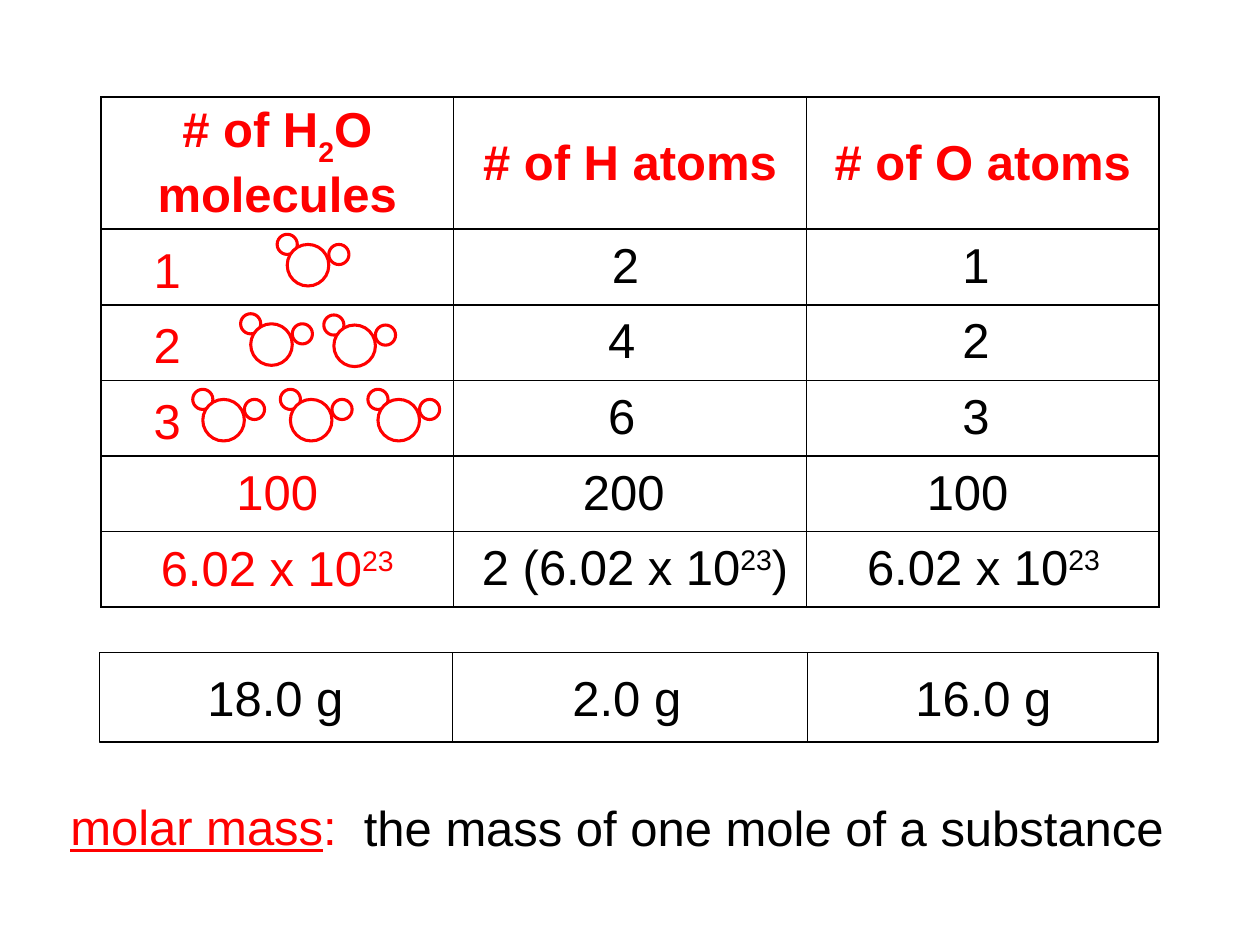
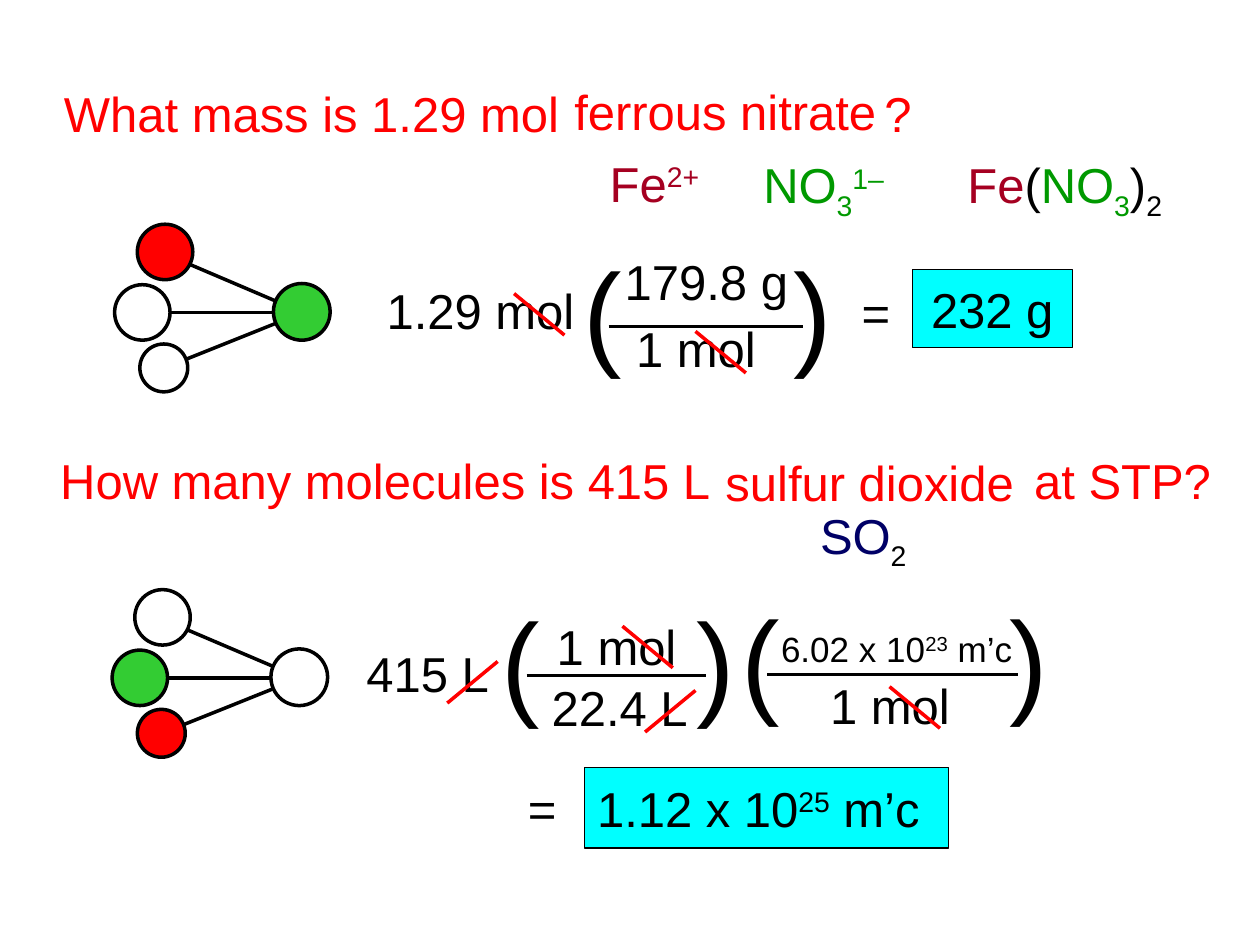
"""Build two chemistry slides: counting atoms in water, and mole conversions."""
import pptx
import pptx.dml.color
import pptx.enum.shapes
import pptx.enum.text
import pptx.oxml.ns
import pptx.util
from lxml import etree

Inches = pptx.util.Inches
RGBColor = pptx.dml.color.RGBColor
Anchor = pptx.enum.text.MSO_ANCHOR
Align = pptx.enum.text.PP_ALIGN
Shape = pptx.enum.shapes.MSO_SHAPE

RED = RGBColor(0xFF, 0x00, 0x00)
BLACK = RGBColor(0x00, 0x00, 0x00)
WHITE = RGBColor(0xFF, 0xFF, 0xFF)
CYAN = RGBColor(0x00, 0xFF, 0xFF)
GREEN = RGBColor(0x33, 0xCC, 0x33)
IRON = RGBColor(0xA5, 0x00, 0x21)
NITRATE = RGBColor(0x00, 0x99, 0x00)
NAVY = RGBColor(0x00, 0x00, 0x66)

FONT = "Arial"
BODY_SIZE = 28
LINE_HEIGHT = 0.57
SUPER, SUB = 30, -25

AVOGADRO = [("6.02 x 10",), ("23", SUPER)]

COLUMN_WIDTH = 2.8
ROW_HEIGHTS = [1.02] + [0.6] * 5
HEADERS = [[("# of H",), ("2", -30), ("O molecules",)], "# of H atoms", "# of O atoms"]
COUNTS = ["1", "2", "3", "100", AVOGADRO]
DRAWN_ROWS = 3
FIRST_ANSWER_TOP = 1.81
HYDROGEN_ANSWERS = [
    (4.59, 0.75, "2"), (4.56, 0.75, "4"), (4.56, 0.75, "6"), (4.37, 1.16, "200"),
    (3.64, 2.8, [("2 (6.02 x 10",), ("23", SUPER), (")",)]),
]
OXYGEN_ANSWERS = [
    (7.37, 0.75, "1"), (7.37, 0.75, "2"), (7.37, 0.75, "3"), (7.1, 1.16, "100"),
    (6.61, 2.39, AVOGADRO),
]
MASSES = [(1.39, "18.0 g"), (4.18, "2.0 g"), (7.01, "16.0 g")]
MASS_FRAME = (0.79, 5.18, 8.4, 0.71)
MASS_DIVIDERS = [3.59, 6.41]
WATER_ATOMS = [(0, 0, 0.16), (0.41, 0.08, 0.16), (0.08, 0.08, 0.33)]
WATER_PLACES = [(2.2, 1.86), (1.91, 2.49), (2.57, 2.5)] + [
    (1.53 + 0.695 * step, 3.09) for step in range(3)]

QUESTIONS = [
    (0.41, 0.61, 4.2, "What mass is 1.29 mol"),
    (4.46, 0.6, 2.61, "ferrous nitrate"),
    (6.92, 0.61, 0.5, "?"),
    (0.38, 3.53, 5.4, "How many molecules is 415 L"),
    (5.66, 3.54, 2.5, "sulfur dioxide"),
    (8.11, 3.53, 1.7, "at STP?"),
]
FORMULAS = [
    (4.74, 1.17, 1.31, [("Fe", 0, IRON), ("2+", SUPER, IRON)]),
    (5.96, 1.18, 1.34, [("NO", 0, NITRATE), ("3", SUB, NITRATE), ("1–", SUPER, NITRATE)]),
    (7.58, 1.18, 1.9, [("Fe", 0, IRON), ("(",), ("NO", 0, NITRATE),
                       ("3", SUB, NITRATE), (")",), ("2", SUB)]),
    (6.41, 3.96, 0.92, [("SO", 0, NAVY), ("2", SUB)]),
]
WORKING = [
    (2.97, 2.18, 1.73, "1.29 mol"),
    (4.86, 1.95, 1.62, "179.8 g"),
    (4.95, 2.48, 1.19, "1 mol"),
    (6.74, 2.19, 0.45, "="),
    (2.81, 5.06, 1.19, "415 L"),
    (4.32, 4.84, 1.19, "1 mol"),
    (4.28, 5.33, 1.4, "22.4 L"),
    (6.49, 5.31, 1.19, "1 mol"),
    (4.09, 6.13, 0.45, "="),
]
RESULTS = [
    (7.24, 2.14, 1.27, 0.62, "232 g", Align.CENTER),
    (4.64, 6.09, 2.89, 0.64, [("1.12 x 10",), ("25", SUPER), (" m’c",)], Align.LEFT),
]
FRACTIONS = [(4.53, 6.2, 1.86), (3.88, 5.43, 4.63), (5.79, 7.91, 4.62)]
FALLING_STRIKES = [(4.08, 2.33), (5.52, 2.63), (4.94, 4.97), (7.06, 5.45)]
RISING_STRIKES = [(3.55, 5.25), (5.12, 5.48)]
STRIKE_WIDTH, STRIKE_HEIGHT = 0.4, 0.33

MAP_CIRCLES = {"mass": (0.18, 0, 0.44), "volume": (0, 0.48, 0.44),
               "particles": (0.2, 0.95, 0.38), "mole": (1.26, 0.47, 0.45)}
MAP_LINKS = [(0.57, 1.07, 1.27, 0.79), (0.6, 0.32, 1.28, 0.61), (0.43, 0.7, 1.26, 0.7)]
MOLE_MAPS = [
    (0.91, 1.78, {"mass": RED, "mole": GREEN}),
    (0.89, 4.68, {"volume": GREEN, "particles": RED}),
]


def write(frame, content, colour=BLACK, size=BODY_SIZE, align=Align.LEFT, bold=False):
    """Fill a text frame from a string or a list of (text, baseline, colour) spans."""
    para = frame.paragraphs[0]
    para.alignment = align
    for part in [(content,)] if isinstance(content, str) else content:
        text, baseline, own_colour = (*part, 0, colour)[:3] if len(part) == 1 else (*part, colour)[:3]
        span = para.add_run()
        span.text = text
        span.font.name = FONT
        span.font.size = pptx.util.Pt(size)
        span.font.bold = bold
        span.font.color.rgb = own_colour
        if baseline:
            span.font._element.set("baseline", str(baseline * 1000))


def add_text(page, left, top, width, content, height=LINE_HEIGHT, **style):
    """Add a wrapping text box and return its paragraph."""
    box = page.shapes.add_textbox(Inches(left), Inches(top), Inches(width), Inches(height))
    box.text_frame.word_wrap = True
    write(box.text_frame, content, **style)
    return box.text_frame.paragraphs[0]


def add_outline(page, kind, left, top, width, height, fill, line, weight):
    """Add a flat preset shape."""
    shape = page.shapes.add_shape(kind, Inches(left), Inches(top), Inches(width), Inches(height))
    shape.shadow.inherit = False
    if fill is None:
        shape.fill.background()
    else:
        shape.fill.solid()
        shape.fill.fore_color.rgb = fill
    shape.line.color.rgb = line
    shape.line.width = pptx.util.Pt(weight)
    return shape


def add_line(page, x1, y1, x2, y2, colour=BLACK, weight=2.0):
    """Add a flat straight line."""
    line = page.shapes.add_connector(pptx.enum.shapes.MSO_CONNECTOR.STRAIGHT,
                                     Inches(x1), Inches(y1), Inches(x2), Inches(y2))
    line.line.color.rgb = colour
    line.line.width = pptx.util.Pt(weight)
    etree.SubElement(line._element.spPr, pptx.oxml.ns.qn("a:effectLst"))


def add_borders(cell):
    """Give a cell thin black borders and no fill."""
    properties = cell._tc.get_or_add_tcPr()
    for side in ("lnL", "lnR", "lnT", "lnB"):
        border = etree.SubElement(properties, pptx.oxml.ns.qn("a:" + side), w="12700")
        fill = etree.SubElement(border, pptx.oxml.ns.qn("a:solidFill"))
        etree.SubElement(fill, pptx.oxml.ns.qn("a:srgbClr"), val=str(BLACK))
    cell.fill.background()


def add_count_table(page):
    """Add the molecule table with its headers and first column."""
    table = page.shapes.add_table(len(ROW_HEIGHTS), len(HEADERS), Inches(0.8), Inches(0.77),
                                  Inches(COLUMN_WIDTH * len(HEADERS)),
                                  Inches(sum(ROW_HEIGHTS))).table
    table.first_row = table.horz_banding = False
    for column in table.columns:
        column.width = Inches(COLUMN_WIDTH)
    for row, height in zip(table.rows, ROW_HEIGHTS):
        row.height = Inches(height)
    for cell in table.iter_cells():
        add_borders(cell)
        cell.vertical_anchor = Anchor.MIDDLE
    for column, header in enumerate(HEADERS):
        write(table.cell(0, column).text_frame, header, RED, align=Align.CENTER, bold=True)
    for index, count in enumerate(COUNTS):
        cell = table.cell(index + 1, 0)
        drawn = index < DRAWN_ROWS
        if drawn:
            cell.vertical_anchor = Anchor.BOTTOM
            cell.margin_left = Inches(0.42)
        write(cell.text_frame, count, RED, align=Align.LEFT if drawn else Align.CENTER)


def build_water_page(page):
    """Lay out the atom counts, the masses and the definition."""
    add_count_table(page)
    for left, top in WATER_PLACES:
        for x, y, size in WATER_ATOMS:
            add_outline(page, Shape.OVAL, left + x, top + y, size, size, WHITE, RED, 1.75)
    for answers in (HYDROGEN_ANSWERS, OXYGEN_ANSWERS):
        for index, (left, width, content) in enumerate(answers):
            add_text(page, left, FIRST_ANSWER_TOP + 0.6 * index, width, content,
                     align=Align.CENTER)
    add_outline(page, Shape.RECTANGLE, *MASS_FRAME, None, BLACK, 0.75)
    top, height = MASS_FRAME[1], MASS_FRAME[3]
    for x in MASS_DIVIDERS:
        add_line(page, x, top, x, top + height, weight=0.75)
    for left, mass in MASSES:
        add_text(page, left, 5.25, 1.59, mass, align=Align.CENTER)
    term = add_text(page, 0.46, 6.27, 2.43, [("molar mass",), (":",)], colour=RED)
    term.runs[0].font.underline = True
    add_text(page, 2.79, 6.28, 6.67, "the mass of one mole of a substance")


def build_conversion_page(page):
    """Lay out the two worked conversions with their mole maps."""
    for left, top, width, height, content, align in RESULTS:
        result = add_outline(page, Shape.RECTANGLE, left, top, width, height, CYAN, BLACK, 0.75)
        result.text_frame.vertical_anchor = Anchor.MIDDLE
        write(result.text_frame, content, align=align)
    for question in QUESTIONS:
        add_text(page, *question, colour=RED)
    for left, top, fills in MOLE_MAPS:
        for x1, y1, x2, y2 in MAP_LINKS:
            add_line(page, left + x1, top + y1, left + x2, top + y2)
        for name, (x, y, size) in MAP_CIRCLES.items():
            add_outline(page, Shape.OVAL, left + x, top + y, size, size,
                        fills.get(name), BLACK, 2)
    for left, right, top in FRACTIONS:
        for x, bracket in ((left, "("), (right, ")")):
            add_text(page, x, top, 0.42, bracket, height=1.2, size=66, align=Align.CENTER)
        add_line(page, left + 0.3, top + 0.73, right + 0.17, top + 0.73, weight=1.75)
    for item in FORMULAS + WORKING:
        add_text(page, *item)
    add_text(page, 6.1, 4.93, 2.12, AVOGADRO + [(" m’c",)], height=0.43, size=20)
    for x, y in FALLING_STRIKES:
        add_line(page, x, y, x + STRIKE_WIDTH, y + STRIKE_HEIGHT, RED)
    for x, y in RISING_STRIKES:
        add_line(page, x + STRIKE_WIDTH, y, x, y + STRIKE_HEIGHT, RED)


def main():
    """Build and save the deck."""
    deck = pptx.Presentation()
    deck.slide_width, deck.slide_height = Inches(10), Inches(7.5)
    for build in (build_water_page, build_conversion_page):
        build(deck.slides.add_slide(deck.slide_layouts[6]))
    deck.save("out.pptx")


if __name__ == "__main__":
    main()
